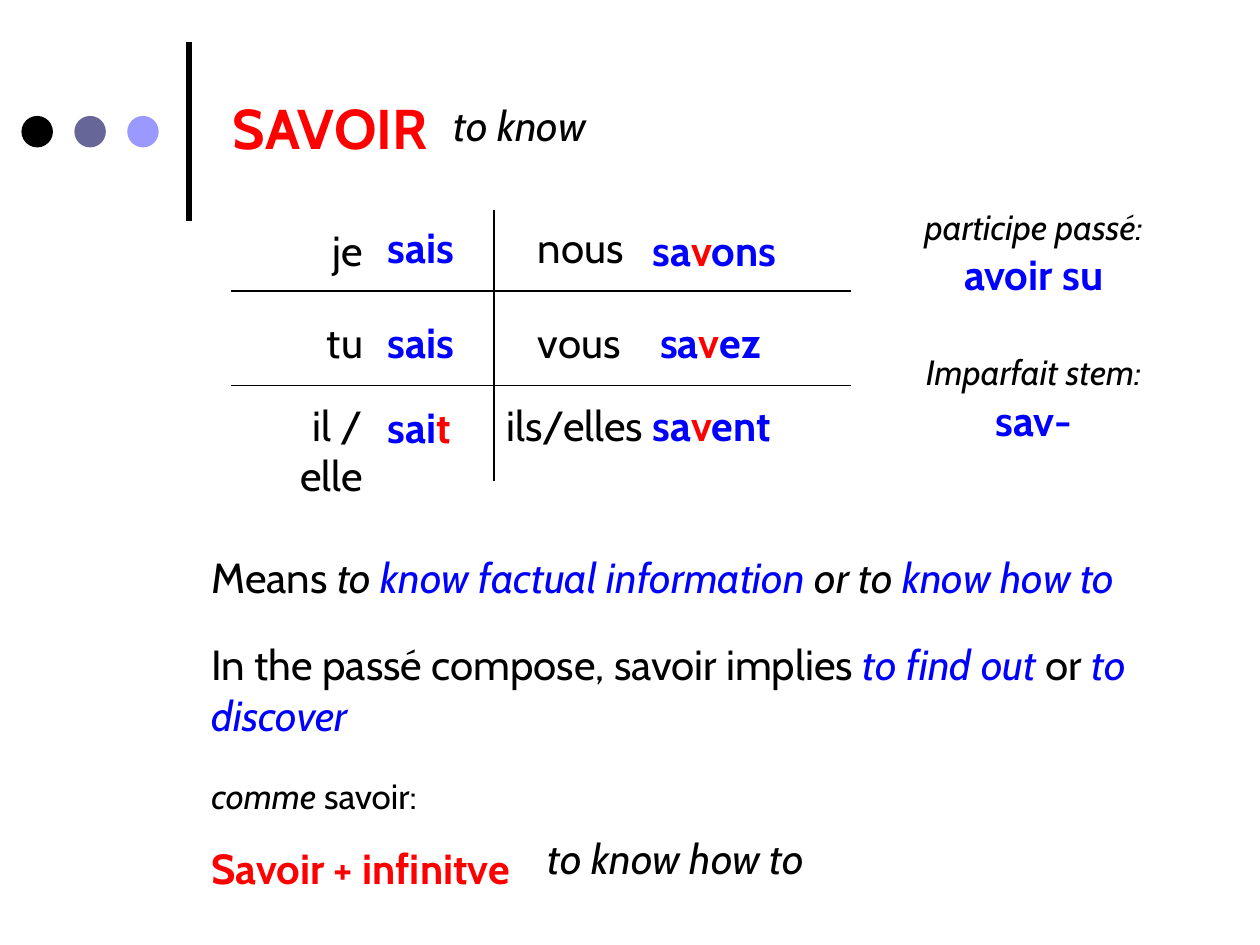
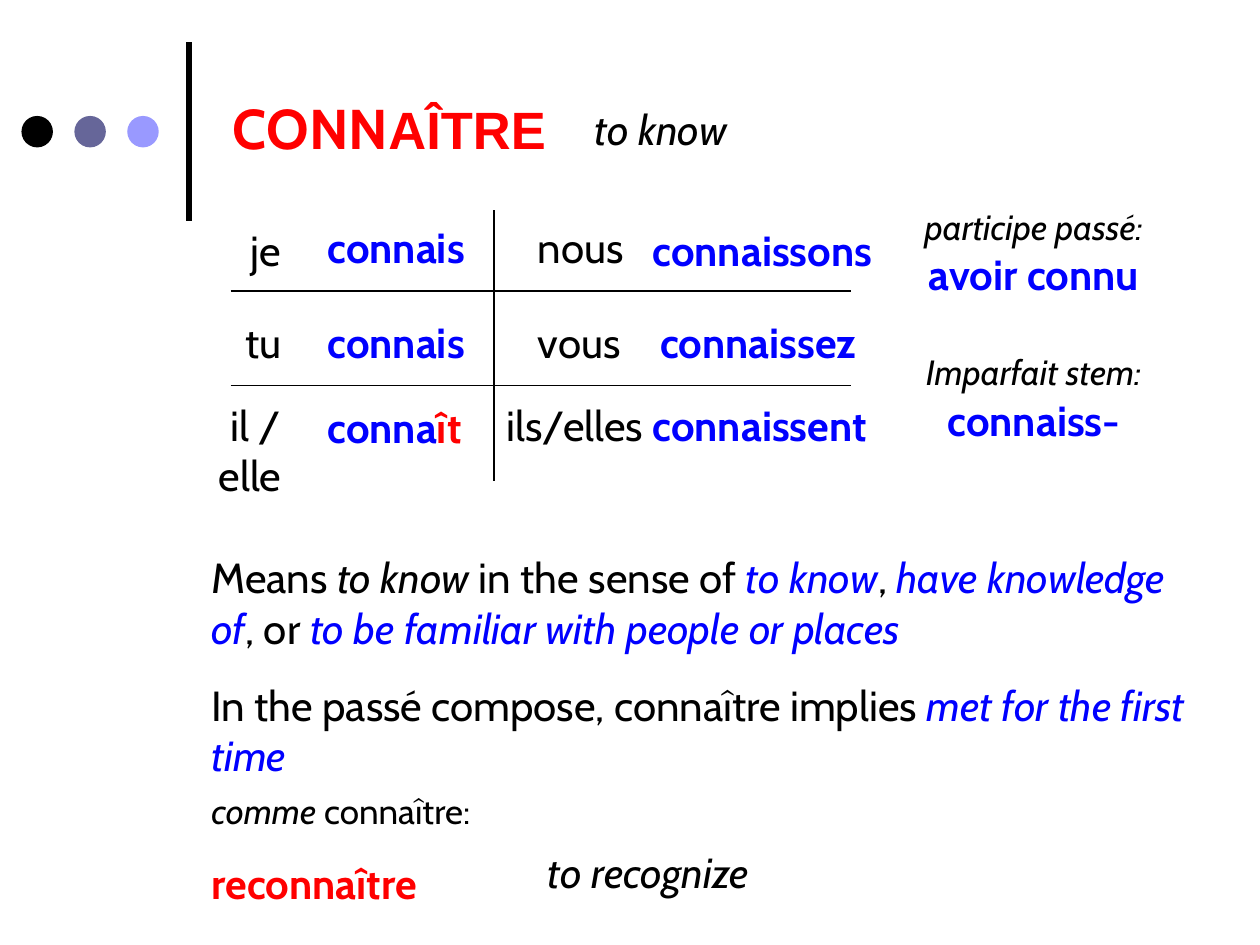
from dataclasses import dataclass
from typing import NamedTuple

from lxml.etree import SubElement
from pptx import Presentation
from pptx.dml.color import RGBColor
from pptx.enum.shapes import MSO_CONNECTOR, MSO_SHAPE
from pptx.enum.text import MSO_AUTO_SIZE, PP_ALIGN
from pptx.oxml.ns import qn
from pptx.util import Inches, Pt

COLORS = {
    "black": "000000",
    "slate": "666699",
    "lilac": "9999FF",
    "red": "FF0000",
    "blue": "0000FF",
}
FONT = "Cabin"
LEFT, CENTER, RIGHT = PP_ALIGN.LEFT, PP_ALIGN.CENTER, PP_ALIGN.RIGHT

# Run formats used inside sentences
RED = {"color": "red"}
ITALIC = {"italic": True}
BLUE_ITALIC = {"color": "blue", "italic": True}


class Box(NamedTuple):
    left: float
    top: float
    width: float
    height: float = 0.51


class Column(NamedTuple):
    """Three stacked cells of the conjugation grid."""
    left: float
    width: float
    tops: tuple
    texts: list
    format: dict


@dataclass
class Verb:
    title: list
    title_width: float
    meaning_at: tuple
    pronoun_right: float
    form_left: float
    singular: list
    plural: list
    participle: str
    stem: str
    usage: list
    past_usage: list
    past_top: float
    like_top: float
    like_verb: str
    related: str
    related_meaning: str
    related_top: float


VERBS = [
    Verb(
        title=["SAVOIR"], title_width=2.75, meaning_at=(3.5, 0.74),
        pronoun_right=2.98, form_left=2.98,
        singular=["sais", "sais", ["sai", ("t", RED)]],
        plural=[["sa", ("v", RED), ending] for ending in ("ons", "ez", "ent")],
        participle="avoir su", stem="sav-",
        usage=["Means ", ("to ", ITALIC),
               ("know factual information ", BLUE_ITALIC),
               ("or to ", ITALIC), ("know how to", BLUE_ITALIC)],
        past_usage=["In the passé compose, savoir implies ",
                    ("to find out ", BLUE_ITALIC), "or ",
                    ("to discover", BLUE_ITALIC)],
        past_top=5.02, like_top=6.1, like_verb="savoir:",
        related="Savoir + infinitve", related_meaning="to know how to",
        related_top=6.56,
    ),
    Verb(
        title=["CONN", ("AÎTRE", {"font": "Arial", "size": 30})],
        title_width=4.75, meaning_at=(4.62, 0.77),
        pronoun_right=2.33, form_left=2.5,
        singular=["connais", "connais", ["conna", ("ît", RED)]],
        plural=["connaissons", "connaissez", "connaissent"],
        participle="avoir connu", stem="connaiss-",
        usage=["Means ", ("to know ", ITALIC), "in the sense of ",
               ("to know", BLUE_ITALIC), ", ",
               ("have knowledge of", BLUE_ITALIC), ", or ",
               ("to be familiar with people or places", BLUE_ITALIC)],
        past_usage=["In the passé compose, connaître implies ",
                    ("met for the first time", BLUE_ITALIC)],
        past_top=5.34, like_top=6.22, like_verb="connaître:",
        related="reconnaître", related_meaning="to recognize",
        related_top=6.67,
    ),
]


def rgb(name: str) -> RGBColor:
    return RGBColor.from_string(COLORS[name])


def add_run(p, text: str, size=24, color="black", bold=False, italic=False,
            font=FONT) -> None:
    r = p.add_run()
    r.text = text
    r.font.name = font
    r.font.size = Pt(size)
    r.font.bold = bold
    r.font.italic = italic
    r.font.color.rgb = rgb(color)


def fill_paragraph(p, text, align=LEFT, **fmt) -> None:
    """Text is a string, or a list of strings and (string, format) pairs."""
    p.alignment = align
    for part in [text] if isinstance(text, str) else text:
        words, change = (part, {}) if isinstance(part, str) else part
        add_run(p, words, **{**fmt, **change})


def add_text(s, box: Box, text, **fmt):
    sp = s.shapes.add_textbox(*(Inches(v) for v in box))
    tf = sp.text_frame
    tf.word_wrap = True
    tf.auto_size = MSO_AUTO_SIZE.SHAPE_TO_FIT_TEXT
    fill_paragraph(tf.paragraphs[0], text, **fmt)
    return tf


def add_line(s, x1: float, y1: float, x2: float, y2: float,
             width=0.75) -> None:
    sp = s.shapes.add_connector(MSO_CONNECTOR.STRAIGHT, Inches(x1),
                                Inches(y1), Inches(x2), Inches(y2))
    sp.line.color.rgb = rgb("black")
    sp.line.width = Pt(width)
    SubElement(sp._element.spPr, qn("a:effectLst"))


def add_decoration(s) -> None:
    """Upright rule and three dots beside the title."""
    add_line(s, 1.5, 1.75, 1.5, 0.33, width=3)
    for i, color in enumerate(("black", "slate", "lilac")):
        sp = s.shapes.add_shape(MSO_SHAPE.OVAL, Inches(0.17 + 0.42 * i),
                                Inches(0.92), Inches(0.25), Inches(0.25))
        sp.shadow.inherit = False
        sp.fill.solid()
        sp.fill.fore_color.rgb = rgb(color)
        sp.line.fill.background()


def add_conjugation(s, verb: Verb) -> None:
    # Grid rules
    for y in (2.31, 3.06):
        add_line(s, 1.83, y, 6.75, y)
    add_line(s, 3.92, 1.67, 3.92, 3.82)

    # Pronouns and verb forms
    form = {"color": "blue", "bold": True}
    columns = [
        Column(verb.pronoun_right - 1.08, 1.08, (1.73, 2.46, 3.12),
               ["je", "tu", "il / elle"], {"align": RIGHT}),
        Column(verb.form_left, 1.52, (1.71, 2.46, 3.14), verb.singular, form),
        Column(4.17, 1.08, (1.71, 2.46), ["nous", "vous"], {}),
        Column(3.92, 1.33, (3.12,), ["ils/elles"], {}),
        Column(5.08, 2.08, (1.73, 3.12), verb.plural[::2], form),
        Column(5.14, 2.08, (2.46,), verb.plural[1:2], form),
    ]
    for col in columns:
        for top, text in zip(col.tops, col.texts):
            add_text(s, Box(col.left, top, col.width), text, **col.format)


def add_key_forms(s, verb: Verb) -> None:
    """Labelled forms at the right of the grid."""
    for label, value, label_top, value_top in (
            ("participe passé:", verb.participle, 1.58, 1.92),
            ("Imparfait stem:", verb.stem, 2.73, 3.08)):
        add_text(s, Box(7.08, label_top, 2.25, 0.44), label, size=20,
                 italic=True, align=CENTER)
        add_text(s, Box(7.08, value_top, 2.25), value, color="blue",
                 bold=True, align=CENTER)


def add_usage(s, verb: Verb) -> None:
    # Meaning in the present and in the past
    add_text(s, Box(1.58, 4.33, 8.17, 0.91), verb.usage)
    add_text(s, Box(1.58, verb.past_top, 8.17, 0.91), verb.past_usage)

    # Related verb
    tf = add_text(s, Box(1.58, verb.like_top, 2.92, 1.05),
                  [("comme ", ITALIC), verb.like_verb], size=20)
    p = tf.add_paragraph()
    p.line_spacing = 1.5
    fill_paragraph(p, verb.related, color="red", bold=True)
    add_text(s, Box(4.25, verb.related_top, 2.83), verb.related_meaning,
             italic=True)


def add_verb_slide(prs, verb: Verb) -> None:
    s = prs.slides.add_slide(prs.slide_layouts[6])
    add_decoration(s)
    add_text(s, Box(1.75, 0.69, verb.title_width, 0.64), verb.title, size=32,
             color="red", bold=True)
    add_text(s, Box(*verb.meaning_at, 2.08), "to know", italic=True)
    add_conjugation(s, verb)
    add_key_forms(s, verb)
    add_usage(s, verb)


def main() -> None:
    prs = Presentation()
    prs.slide_width, prs.slide_height = Inches(10), Inches(7.5)
    for verb in VERBS:
        add_verb_slide(prs, verb)
    prs.save("out.pptx")


if __name__ == "__main__":
    main()
